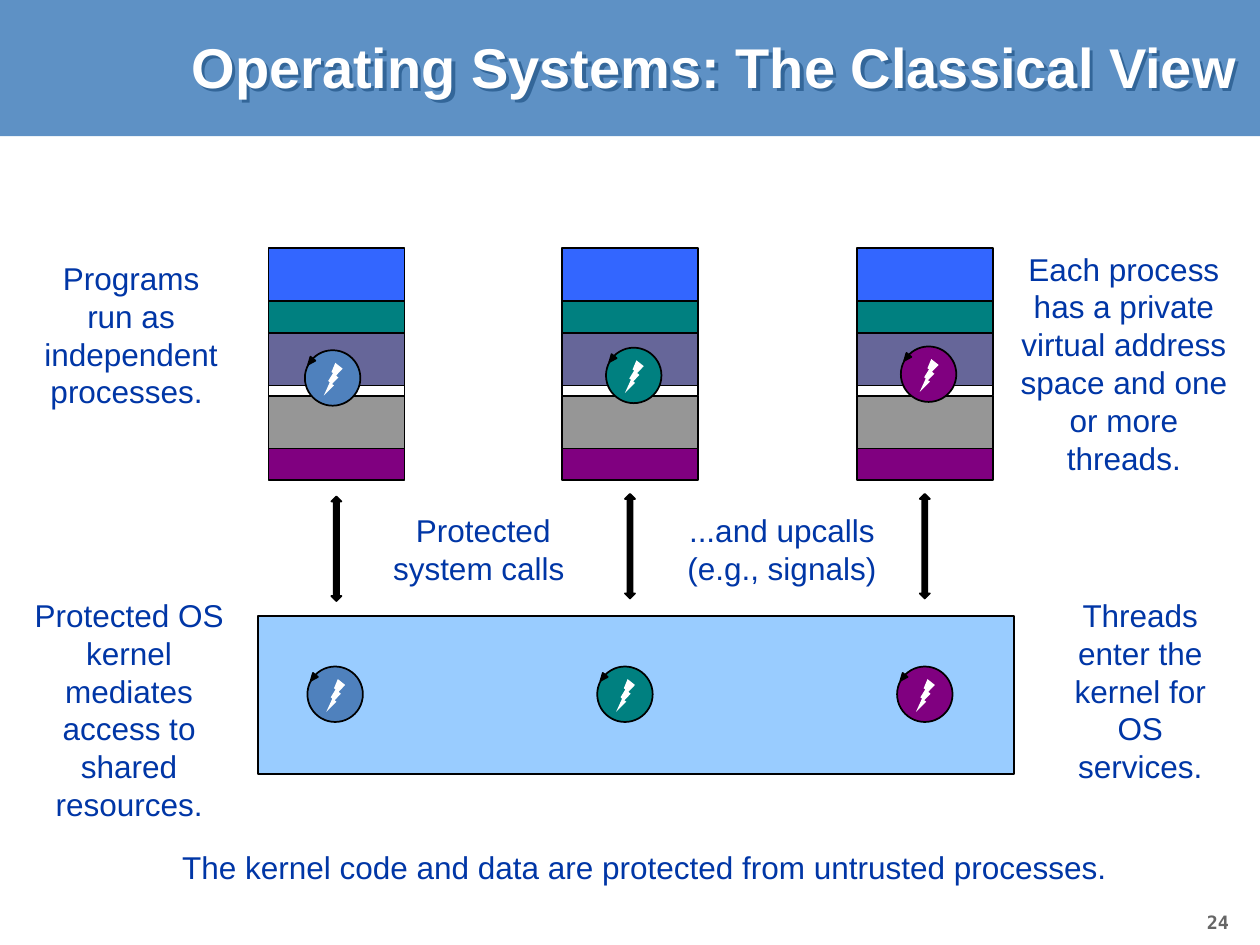
from lxml.etree import SubElement
from pptx import Presentation
from pptx.dml.color import RGBColor
from pptx.enum.shapes import MSO_SHAPE
from pptx.enum.text import MSO_ANCHOR, PP_ALIGN
from pptx.oxml.ns import qn
from pptx.util import Inches, Pt

HUES = {
    "band": "5E91C5", "shade": "336699", "ink": "0036A6", "page": "666666",
    "white": "FFFFFF", "black": "000000", "sky": "99CCFF", "royal": "3366FF",
    "teal": "008080", "slate": "666699", "gray": "969696", "plum": "800080",
    "blue": "4F81BD",
}
LAYERS = [("royal", 0.42), ("teal", 0.25), ("slate", 0.42),
          ("white", 0.08), ("gray", 0.42), ("plum", 0.25)]
LANES = [
    {"left": 2.13, "arrow": 3.94, "hue": "blue", "user": (2.42, 2.78), "kernel": (2.44, 5.29)},
    {"left": 4.46, "arrow": 3.92, "hue": "teal", "user": (4.81, 2.76), "kernel": (4.74, 5.29)},
    {"left": 6.8, "arrow": 3.92, "hue": "plum", "user": (7.15, 2.75), "kernel": (7.12, 5.29)},
]
NOTES = [
    ((0.25, 2, 1.58, 1.31), "Programs run as\nindependent processes. "),
    ((2.83, 4, 2.01, 0.71), "Protected system calls "),
    ((5.2, 4, 2.01, 0.71), "...and upcalls (e.g., signals)"),
    ((0.16, 4.67, 1.73, 1.92), "Protected OS kernel mediates access to shared resources."),
    ((8.35, 4.67, 1.4, 1.62), "Threads enter the kernel for OS services."),
    ((7.92, 1.92, 2, 1.92),
     "Each process has a private virtual address space and one or more threads."),
]


def color(name):
    """Return the named colour."""
    return RGBColor.from_string(HUES[name])


def add_form(shapes, kind, box, fill, line="black"):
    """Add a flat preset shape in a box of inches."""
    form = shapes.add_shape(kind, *map(Inches, box))
    form.shadow.inherit = False
    form.fill.solid()
    form.fill.fore_color.rgb = color(fill)
    if line:
        form.line.color.rgb = color(line)
        form.line.width = Pt(1)
    else:
        form.line.fill.background()
    return form


def add_text(shapes, box, text, size=18, font="Arial", hue="ink", bold=False,
             align=PP_ALIGN.CENTER, anchor=MSO_ANCHOR.MIDDLE, wrap=True, space=None):
    """Add a text box with one paragraph per line of text."""
    label = shapes.add_textbox(*map(Inches, box))
    frame = label.text_frame
    frame.word_wrap = wrap
    frame.vertical_anchor = anchor
    frame.text = text
    for para in frame.paragraphs:
        para.alignment = align
        para.line_spacing = space
        face = para.runs[0].font
        face.name, face.size, face.bold = font, Pt(size), bold
        face.color.rgb = color(hue)
    return label


def add_shade(label):
    """Cast a hard shadow behind the text of a label."""
    effects = SubElement(label.element.spPr, qn("a:effectLst"))
    shadow = SubElement(effects, qn("a:outerShdw"), dist="35921", dir="2700000")
    SubElement(shadow, qn("a:srgbClr"), val=HUES["shade"])


def add_header(shapes, left, top, width, height):
    """Draw the title band."""
    add_form(shapes, MSO_SHAPE.RECTANGLE, (left, top, width, height), "band", None)
    title = add_text(shapes, (left + 0.92, top - 0.08, width - 1, 1.29),
                     "Operating Systems: The Classical View", size=32, hue="white",
                     bold=True, align=PP_ALIGN.RIGHT, space=0.85)
    add_shade(title)


def add_process(shapes, left, top, width):
    """Stack the memory layers of one process."""
    for hue, height in LAYERS:
        add_form(shapes, MSO_SHAPE.FLOWCHART_PROCESS, (left, top, width, height), hue)
        top += height


def add_arrow(shapes, left, top, width, height):
    """Draw a slim arrow with long heads that points up and down."""
    arrow = add_form(shapes, MSO_SHAPE.UP_DOWN_ARROW, (left, top, width, height), "black")
    arrow.adjustments[0] = 2
    arrow.adjustments[1] = 0.5


def add_thread(shapes, left, top, hue):
    """Group a disc, a bolt and a loop tip into one thread."""
    group = shapes.add_group_shape().shapes
    add_form(group, MSO_SHAPE.OVAL, (left, top, 0.44, 0.44), hue)
    bolt = add_form(group, MSO_SHAPE.LIGHTNING_BOLT,
                    (left + 0.15, top + 0.1, 0.15, 0.26), "white", None)
    bolt.element.spPr.get_or_add_xfrm().set("flipH", "1")
    tip = add_form(group, MSO_SHAPE.ISOSCELES_TRIANGLE,
                   (left + 0.02, top + 0.06, 0.05, 0.06), "black")
    tip.rotation = 219


def add_footer(shapes, left, top):
    """Write the closing line and the page number."""
    add_text(shapes, (left + 1.31, top, 7.61, 0.4),
             "The kernel code and data are protected from untrusted processes.", wrap=False)
    add_text(shapes, (left + 9.48, top + 0.5, 0.51, 0.4), "24", size=10.5,
             font="DejaVu Sans Mono", hue="page", bold=True, align=PP_ALIGN.LEFT,
             anchor=MSO_ANCHOR.TOP, wrap=False)


def main():
    """Build and save the slide."""
    deck = Presentation()
    deck.slide_width, deck.slide_height = Inches(10), Inches(7.5)
    shapes = deck.slides.add_slide(deck.slide_layouts[6]).shapes
    add_header(shapes, 0, 0, 10, 1.08)
    add_form(shapes, MSO_SHAPE.FLOWCHART_PROCESS, (2.05, 4.89, 6, 1.25), "sky")
    for lane in LANES:
        add_process(shapes, lane["left"], 1.97, 1.08)
        add_arrow(shapes, lane["left"] + 0.5, lane["arrow"], 0.08, 0.83)
        for place in ("user", "kernel"):
            add_thread(shapes, *lane[place], lane["hue"])
    for box, text in NOTES:
        add_text(shapes, box, text)
    add_footer(shapes, 0, 6.68)
    deck.save("out.pptx")


if __name__ == "__main__":
    main()
